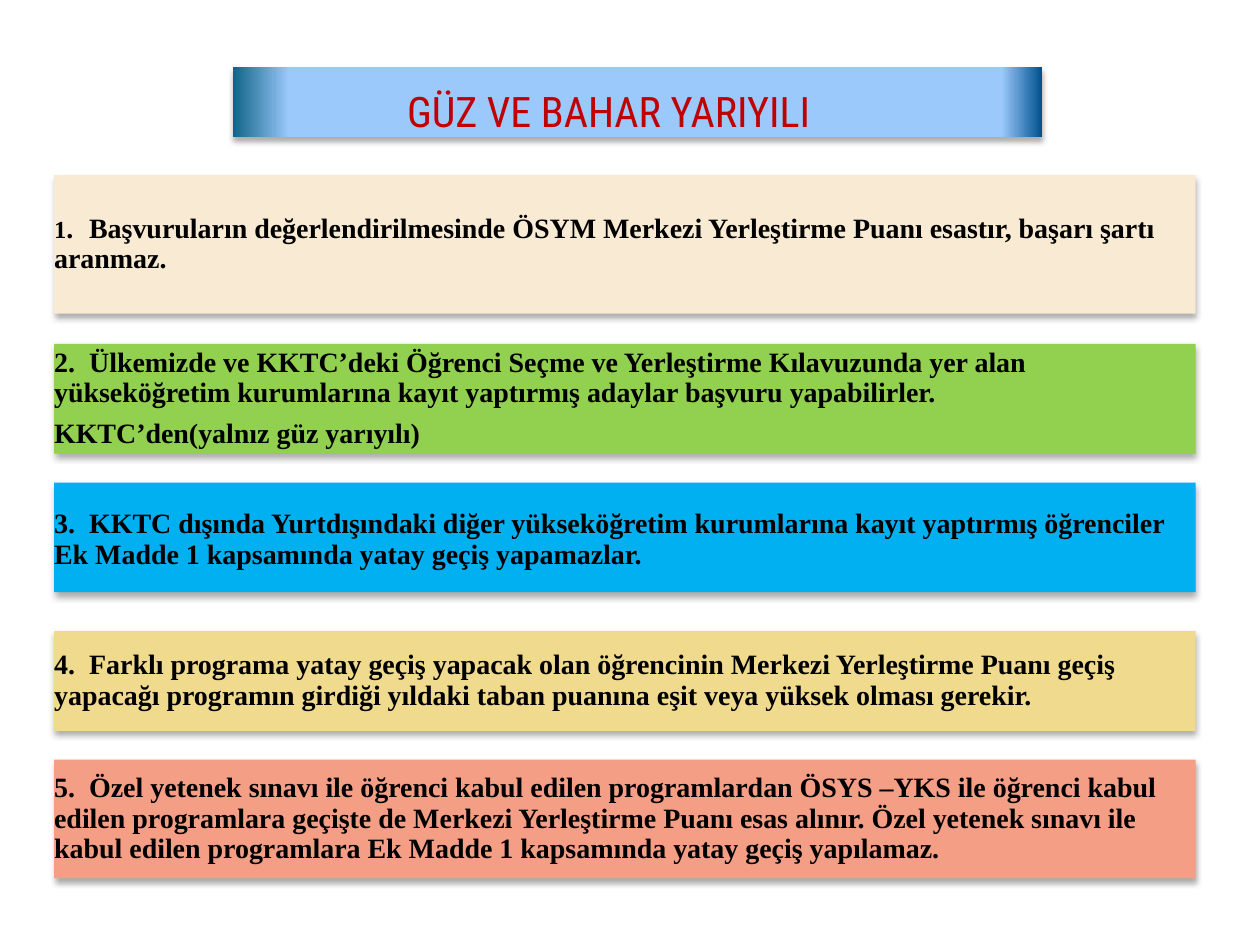
import copy
from dataclasses import dataclass

import pptx
import pptx.dml.color
import pptx.enum.shapes
import pptx.enum.text
import pptx.oxml
import pptx.oxml.ns
import pptx.util

Pt = pptx.util.Pt
ANCHOR = pptx.enum.text.MSO_ANCHOR
ALIGN = pptx.enum.text.PP_ALIGN


@dataclass(frozen=True)
class Theme:
    title_font: str = "Roboto Condensed"
    body_font: str = "Times New Roman"
    title_size: int = 24
    body_size: int = 16
    small_size: int = 14
    title_color: str = "C00000"
    body_color: str = "000000"
    title_stops: tuple = ((0, "126489"), (0.07, "9BC9FB"), (0.95, "9BC9FB"), (1, "00518E"))
    rule_fills: tuple = ("F9EAD3", "92D050", "00B0F0", "EFDA8E", "F49E86")


THEME = Theme()
TITLE_BOX = (133.2, 38.16, 462.24, 40.32)
RULE_LEFT, RULE_WIDTH = 30.96, 652.32
NUMBER_GAP = 20

RULES = [
    (100.08, 79.2, ["Başvuruların değerlendirilmesinde ÖSYM Merkezi Yerleştirme Puanı esastır, "
                    "başarı şartı aranmaz."]),
    (196.56, 62.64, ["Ülkemizde ve KKTC’deki Öğrenci Seçme ve Yerleştirme Kılavuzunda yer alan "
                     "yükseköğretim kurumlarına kayıt yaptırmış adaylar başvuru yapabilirler.",
                     "KKTC’den(yalnız güz yarıyılı)"]),
    (275.76, 62.64, ["KKTC dışında Yurtdışındaki diğer yükseköğretim kurumlarına kayıt yaptırmış "
                     "öğrenciler Ek Madde 1 kapsamında yatay geçiş yapamazlar."]),
    (360.72, 56.88, ["Farklı programa yatay geçiş yapacak olan öğrencinin Merkezi Yerleştirme Puanı "
                     "geçiş yapacağı programın girdiği yıldaki taban puanına eşit veya yüksek "
                     "olması gerekir."]),
    (434.16, 67.68, ["Özel yetenek sınavı ile öğrenci kabul edilen programlardan ÖSYS –YKS ile "
                     "öğrenci kabul edilen programlara geçişte de Merkezi Yerleştirme Puanı esas "
                     "alınır. Özel yetenek sınavı ile kabul edilen programlara Ek Madde 1 "
                     "kapsamında yatay geçiş yapılamaz."]),
]


def color(value):
    return pptx.dml.color.RGBColor.from_string(value)


def style(font, name, size, value, bold):
    font.name = name
    font.size = Pt(size)
    font.bold = bold
    font.color.rgb = color(value)


def finish_box(shape, insets):
    shape.line.fill.background()
    shape.shadow.inherit = False
    effects = shape.element.spPr.find(pptx.oxml.ns.qn("a:effectLst"))
    effects.append(pptx.oxml.parse_xml(
        f'<a:outerShdw {pptx.oxml.ns.nsdecls("a")} blurRad="{Pt(3.5)}" dist="{Pt(2.2)}" '
        'dir="5400000" rotWithShape="0"><a:srgbClr val="000000">'
        '<a:alpha val="32000"/></a:srgbClr></a:outerShdw>'))
    frame = shape.text_frame
    frame.word_wrap = True
    frame.auto_size = pptx.enum.text.MSO_AUTO_SIZE.NONE
    frame.vertical_anchor = ANCHOR.MIDDLE
    frame.margin_left, frame.margin_top, frame.margin_right, frame.margin_bottom = map(Pt, insets)
    return frame


def fill_gradient(shape, stops):
    shape.fill.gradient()
    shape.fill.gradient_angle = 0
    stop_list = shape.element.spPr.find(".//" + pptx.oxml.ns.qn("a:gsLst"))
    while len(stop_list) < len(stops):
        stop_list.append(copy.deepcopy(stop_list[0]))
    for stop, (position, value) in zip(shape.fill.gradient_stops, stops):
        stop.position = position
        stop.color.rgb = color(value)


def place_title(page, box, text):
    title = page.shapes.title
    title.left, title.top, title.width, title.height = map(Pt, box)
    fill_gradient(title, THEME.title_stops)
    frame = finish_box(title, (0, 10, 33, 0))
    frame.text = text
    para = frame.paragraphs[0]
    para.alignment = ALIGN.CENTER
    style(para.runs[0].font, THEME.title_font, THEME.title_size, THEME.title_color, False)


def add_number_tab(para):
    para._p.get_or_add_pPr().append(pptx.oxml.parse_xml(
        f'<a:tabLst {pptx.oxml.ns.nsdecls("a")}><a:tab pos="{Pt(NUMBER_GAP)}" algn="l"/></a:tabLst>'))


def place_rule(page, box, number, lines, fill):
    shape = page.shapes.add_shape(pptx.enum.shapes.MSO_SHAPE.RECTANGLE, *map(Pt, box))
    shape.fill.solid()
    shape.fill.fore_color.rgb = color(fill)
    frame = finish_box(shape, (0, 3 if number == 3 else 0, 0, 0))
    for index, line in enumerate(lines):
        para = frame.add_paragraph() if index else frame.paragraphs[0]
        if index == 0:
            add_number_tab(para)
            para.text = str(number)
            line = f".\t{line}"
        para.add_run().text = line
        para.alignment = ALIGN.LEFT
        para.line_spacing = 0.9
        para.space_after = Pt(6 if index < len(lines) - 1 else 0)
        for span in para.runs:
            style(span.font, THEME.body_font, THEME.body_size, THEME.body_color, True)
    if number == 1:
        frame.paragraphs[0].runs[0].font.size = Pt(THEME.small_size)


def main():
    deck = pptx.Presentation()
    deck.slide_width, deck.slide_height = Pt(720), Pt(540)
    page = deck.slides.add_slide(deck.slide_layouts[5])
    place_title(page, TITLE_BOX, "GÜZ VE BAHAR YARIYILI")
    for number, ((top, height, lines), fill) in enumerate(zip(RULES, THEME.rule_fills), 1):
        place_rule(page, (RULE_LEFT, top, RULE_WIDTH, height), number, lines, fill)
    deck.save("out.pptx")


if __name__ == "__main__":
    main()
